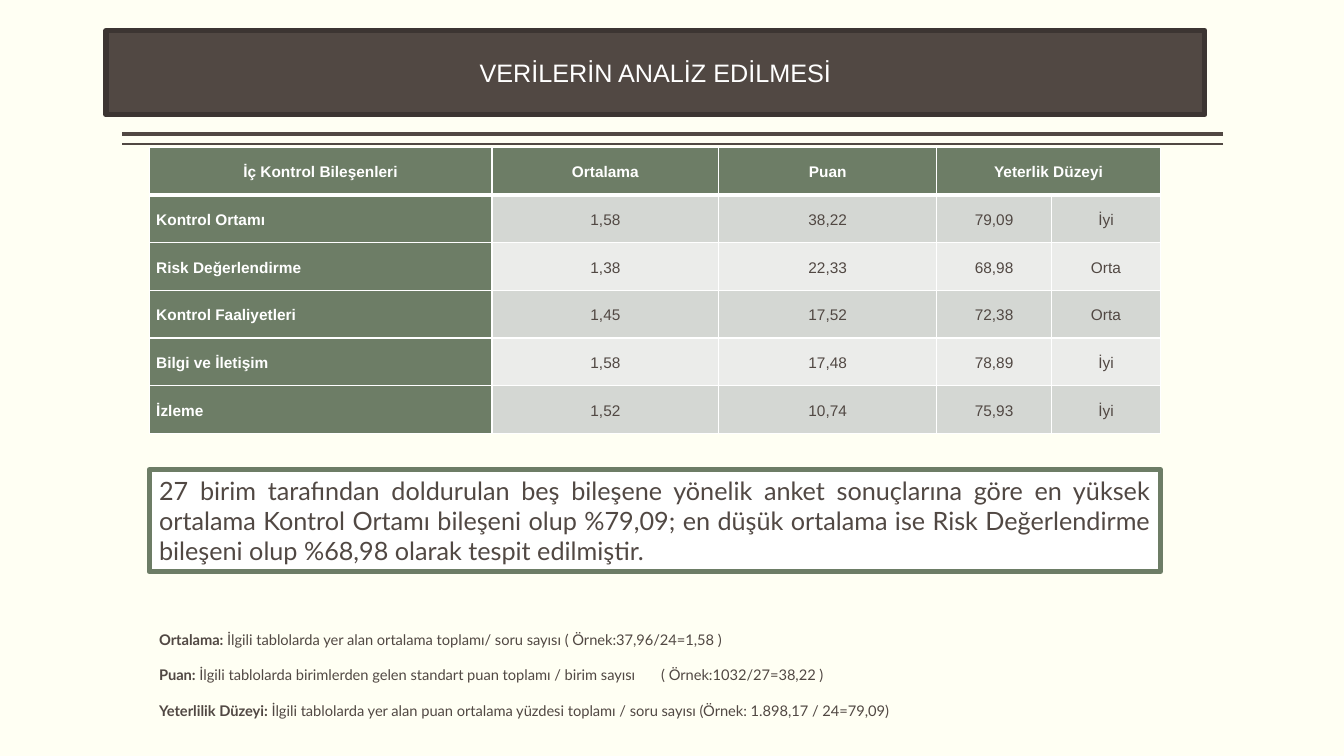
from dataclasses import dataclass

from lxml.etree import SubElement
from pptx import Presentation
from pptx.dml.color import RGBColor
from pptx.enum.shapes import MSO_CONNECTOR, MSO_SHAPE
from pptx.enum.text import MSO_ANCHOR, MSO_AUTO_SIZE, PP_ALIGN
from pptx.oxml.ns import qn
from pptx.util import Inches, Pt


@dataclass(frozen=True)
class Theme:
    background: str = "FFFFF3"
    dark: str = "514843"
    dark_edge: str = "3C3532"
    green: str = "6D7D66"
    band_odd: str = "D4D7D3"
    band_even: str = "EBECEA"
    white: str = "FFFFFF"
    head_font: str = "Arial"
    body_font: str = "Lato"
    large: float = 18
    cell: float = 11
    note: float = 10.5
    edge: float = 3.78


@dataclass(frozen=True)
class Rule:
    y: float
    width: float


@dataclass(frozen=True)
class Component:
    name: str
    values: tuple[str, ...]


@dataclass(frozen=True)
class Note:
    term: str
    text: str


THEME = Theme()
RULES = [Rule(1.33, 3), Rule(1.43, 1)]
HEADERS = ["İç Kontrol Bileşenleri", "Ortalama", "Puan", "Yeterlik Düzeyi"]
COLUMN_WIDTHS = [3.4, 2.25, 2.16, 1.14, 1.08]
COMPONENTS = [
    Component("Kontrol Ortamı", ("1,58", "38,22", "79,09", "İyi")),
    Component("Risk Değerlendirme", ("1,38", "22,33", "68,98", "Orta")),
    Component("Kontrol Faaliyetleri", ("1,45", "17,52", "72,38", "Orta")),
    Component("Bilgi ve İletişim", ("1,58", "17,48", "78,89", "İyi")),
    Component("İzleme", ("1,52", "10,74", "75,93", "İyi")),
]
FINDING = (
    "27 birim tarafından doldurulan beş bileşene yönelik anket sonuçlarına göre "
    "en yüksek ortalama Kontrol Ortamı bileşeni olup %79,09; en düşük ortalama ise "
    "Risk Değerlendirme bileşeni olup %68,98 olarak tespit edilmiştir."
)
NOTES = [
    Note("Ortalama: ", "İlgili tablolarda yer alan ortalama toplamı/ soru sayısı "
         "( Örnek:37,96/24=1,58 )"),
    Note("Puan: ", "İlgili tablolarda birimlerden gelen standart puan toplamı / "
         "birim sayısı\t( Örnek:1032/27=38,22 )"),
    Note("Yeterlilik Düzeyi: ", "İlgili tablolarda yer alan puan ortalama yüzdesi "
         "toplamı / soru sayısı (Örnek: 1.898,17 / 24=79,09)"),
]


def rgb(color: str) -> RGBColor:
    return RGBColor.from_string(color)


def style_run(r, font: str, size: float, color: str, bold: bool = False) -> None:
    r.font.name = font
    r.font.size = Pt(size)
    r.font.color.rgb = rgb(color)
    r.font.bold = bold


def place(sp, left: float, top: float, width: float, height: float) -> None:
    sp.left, sp.top = Inches(left), Inches(top)
    sp.width, sp.height = Inches(width), Inches(height)


def fill_box(sp, text: str, fill: str, edge: str, font: str, color: str, align) -> None:
    sp.fill.solid()
    sp.fill.fore_color.rgb = rgb(fill)
    sp.line.color.rgb = rgb(edge)
    sp.line.width = Pt(THEME.edge)
    tf = sp.text_frame
    tf.text = text
    tf.word_wrap = True
    tf.auto_size = MSO_AUTO_SIZE.SHAPE_TO_FIT_TEXT
    tf.vertical_anchor = MSO_ANCHOR.MIDDLE
    p = tf.paragraphs[0]
    p.alignment = align
    style_run(p.runs[0], font, THEME.large, color)


def add_rule(s, rule: Rule) -> None:
    line = s.shapes.add_connector(MSO_CONNECTOR.STRAIGHT, Inches(12.13), Inches(rule.y),
                                  Inches(1.21), Inches(rule.y))
    line.line.color.rgb = rgb(THEME.dark)
    line.line.width = Pt(rule.width)
    SubElement(line._element.spPr, qn("a:effectLst"))


def set_borders(cell, top: float, bottom: float) -> None:
    tc_pr = cell._tc.get_or_add_tcPr()
    for side, width in (("L", 1), ("R", 1), ("T", top), ("B", bottom)):
        ln = SubElement(tc_pr, qn(f"a:ln{side}"), w=str(Pt(width)))
        fill = SubElement(ln, qn("a:solidFill"))
        SubElement(fill, qn("a:srgbClr"), val=THEME.white)


def format_cell(cell, row: int, col: int) -> None:
    heading = row == 0 or col == 0
    band = THEME.band_odd if row % 2 else THEME.band_even
    set_borders(cell, 3 if row == 1 else 1, 3 if row == 0 else 1)
    cell.fill.solid()
    cell.fill.fore_color.rgb = rgb(THEME.green if heading else band)
    cell.vertical_anchor = MSO_ANCHOR.MIDDLE
    cell.margin_left = cell.margin_right = Inches(0.07)
    cell.margin_top = cell.margin_bottom = 0
    p = cell.text_frame.paragraphs[0]
    p.alignment = PP_ALIGN.LEFT if col == 0 and row > 0 else PP_ALIGN.CENTER
    p.line_spacing = 1.15
    for r in p.runs:
        style_run(r, THEME.head_font, THEME.cell,
                  THEME.white if heading else THEME.dark, heading)


def add_results_table(s) -> None:
    rows = [HEADERS] + [[c.name, *c.values] for c in COMPONENTS]
    table = s.shapes.add_table(len(rows), len(COLUMN_WIDTHS), Inches(1.48), Inches(1.46),
                               Inches(10.03), Inches(2.84)).table
    for column, width in zip(table.columns, COLUMN_WIDTHS):
        column.width = Inches(width)
    for i, texts in enumerate(rows):
        for j, text in enumerate(texts):
            table.cell(i, j).text = text
        for j in range(len(COLUMN_WIDTHS)):
            format_cell(table.cell(i, j), i, j)
    table.cell(0, 3).merge(table.cell(0, 4))


def add_notes(s) -> None:
    sp = s.shapes.add_textbox(Inches(1.48), Inches(6.21), Inches(10.9), Inches(0.98))
    tf = sp.text_frame
    tf.word_wrap = True
    for i, note in enumerate(NOTES):
        p = tf.paragraphs[0] if i == 0 else tf.add_paragraph()
        p.alignment = PP_ALIGN.JUSTIFY
        if i > 0:
            p.space_before = Pt(12.6)
        for text, bold in ((note.term, True), (note.text, False)):
            r = p.add_run()
            r.text = text
            style_run(r, THEME.body_font, THEME.note, THEME.dark, bold)
        if "\t" in note.text:
            tabs = SubElement(p._p.get_or_add_pPr(), qn("a:tabLst"))
            SubElement(tabs, qn("a:tab"), pos=str(Inches(4.98)), algn="l")


def main() -> None:
    prs = Presentation()
    prs.slide_width, prs.slide_height = Inches(13.33), Inches(7.5)
    s = prs.slides.add_slide(prs.slide_layouts[5])
    s.background.fill.solid()
    s.background.fill.fore_color.rgb = rgb(THEME.background)

    # Title bar and double rule
    title = s.shapes.title
    place(title, 1.05, 0.52, 10.9, 0.4)
    fill_box(title, "VERİLERİN ANALİZ EDİLMESİ", THEME.dark, THEME.dark_edge,
             THEME.head_font, THEME.white, PP_ALIGN.CENTER)
    for rule in RULES:
        add_rule(s, rule)

    # Results by component
    add_results_table(s)

    # Main finding
    finding = s.shapes.add_shape(MSO_SHAPE.RECTANGLE, Inches(1.48), Inches(4.66),
                                 Inches(10.03), Inches(1.01))
    finding.shadow.inherit = False
    fill_box(finding, FINDING, THEME.white, THEME.green, THEME.body_font, THEME.dark,
             PP_ALIGN.JUSTIFY)

    # Explanation of the measures
    add_notes(s)
    prs.save("out.pptx")


if __name__ == "__main__":
    main()
